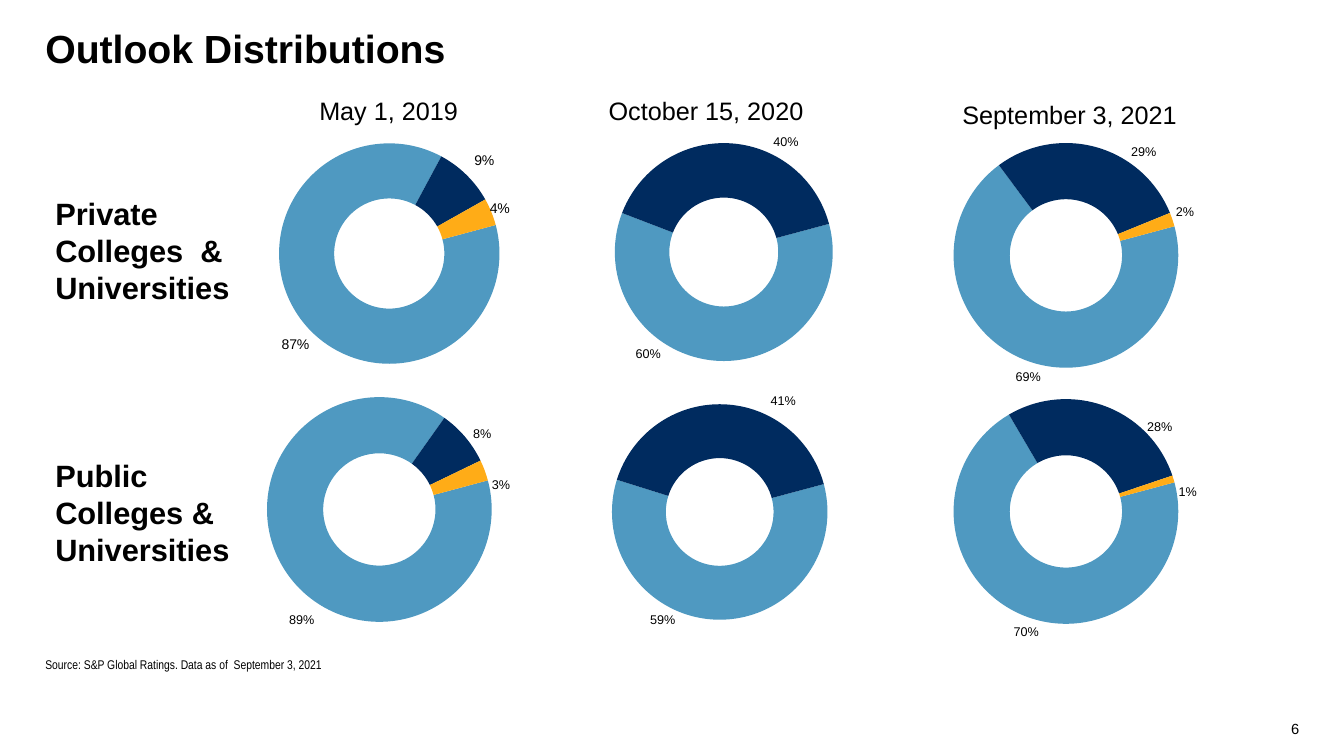
"""Build the outlook distributions slide with six doughnut charts."""
import math

from pptx import Presentation
from pptx.chart import data
from pptx.dml.color import RGBColor
from pptx.enum import chart as ec, text as et
from pptx.oxml import parse_xml
from pptx.oxml.ns import nsdecls, qn
from pptx.util import Pt

TITLE = "Outlook Distributions"
SOURCE = "Source: S&P Global Ratings. Data as of  September 3, 2021"
PAGE = "6"
DATES = [
    ("May 1, 2019", 221, 64.8, 116),
    ("October 15, 2020", 427.7, 64.8, 154.8),
    ("September 3, 2021", 680.4, 67.7, 177.8),
]
GROUPS = [
    ("Private Colleges  & Universities", 135.4),
    ("Public Colleges & Universities", 322.6),
]
COLORS = ["4F99C1", "002B5F", "FFAC17"]
CHART_W, CHART_H = 194.4, 180
START, HOLE = 75, 50
WIDE = (0.085, 0.04, 0.826, 0.892)
# left, top, plot area fractions, values, label size, label centres
CHARTS = [
    (174.2, 97.2, (0.097, 0.029, 0.875, 0.875), (87, 9, 4), 10,
     [(211, 246.5), (346, 114.5), (357, 149)]),
    (427.7, 96.5, (0.059, 0.032, 0.801, 0.865), (60, 40, 0), 9,
     [(463, 253.5), (561.5, 102), (598, 155.5)]),
    (664.6, 95, WIDE, (69, 29, 2), 9,
     [(734.5, 269.5), (817, 108.5), (846.5, 152)]),
    (174.2, 276.5, WIDE, (89, 8, 3), 9,
     [(215.5, 443), (344.5, 310.5), (358, 347)]),
    (408.2, 270.7, (0.149, 0.1, 0.792, 0.856), (59, 41), 9,
     [(473.5, 443.5), (559.5, 286.5)]),
    (664.6, 277.9, WIDE, (70, 28, 1), 9,
     [(733, 452), (828.5, 305), (848.5, 351.5)]),
]


def rgb(code):
    return RGBColor.from_string(code)


def style(font, size, name="Arial", bold=False):
    font.size, font.name, font.bold = Pt(size), name, bold
    font.color.rgb = rgb("000000")


def write(sp, text, size, name="Arial", bold=False, anchor=et.MSO_ANCHOR.TOP,
          margins=(7.2, 3.6, 7.2, 3.6)):
    tf = sp.text_frame
    tf.word_wrap, tf.auto_size = True, et.MSO_AUTO_SIZE.NONE
    tf.vertical_anchor = anchor
    tf.margin_left, tf.margin_top, tf.margin_right, tf.margin_bottom = map(Pt, margins)
    p = tf.paragraphs[0]
    p.alignment = et.PP_ALIGN.LEFT
    r = p.add_run()
    r.text = text
    style(r.font, size, name, bold)
    return p


def place(sp, *box):
    sp.left, sp.top, sp.width, sp.height = map(Pt, box)
    return sp


def text_box(s, *box):
    return s.shapes.add_textbox(*map(Pt, box))


def layout(x, y, size=None):
    parts = [("x", x), ("y", y)]
    head = ""
    if size:
        parts += [("w", size[0]), ("h", size[1])]
        head = ('<c:layoutTarget val="inner"/><c:xMode val="edge"/>'
                '<c:yMode val="edge"/>')
    body = "".join(f'<c:{tag} val="{v:.4f}"/>' for tag, v in parts)
    return parse_xml(f'<c:layout {nsdecls("c")}><c:manualLayout>{head}{body}'
                     '</c:manualLayout></c:layout>')


def add_doughnut(s, left, top, plot, values, size, targets):
    cd = data.CategoryChartData(number_format='0"%"')
    cd.categories = [str(i + 1) for i in range(len(values))]
    cd.add_series("Series 1", values)
    chart = s.shapes.add_chart(ec.XL_CHART_TYPE.DOUGHNUT, Pt(left), Pt(top),
                               Pt(CHART_W), Pt(CHART_H), cd).chart
    chart.has_legend = chart.has_title = False
    style(chart.font, 10)

    area = chart.plots[0]._element.getparent()
    for old in area.findall(qn("c:layout")):
        area.remove(old)
    px, py, pw, ph = plot
    area.insert(0, layout(px, py, (pw, ph)))
    ring = chart.plots[0]._element
    ring.find(qn("c:firstSliceAng")).set("val", str(START))
    ring.find(qn("c:holeSize")).set("val", str(HOLE))

    series = chart.plots[0].series[0]
    total = sum(values)
    as_percent = total == 100
    labels = series.data_labels
    labels.show_percentage, labels.show_value = as_percent, not as_percent
    style(labels.font, size)

    cx = left + (px + pw / 2) * CHART_W
    cy = top + (py + ph / 2) * CHART_H
    radius = min(pw * CHART_W, ph * CHART_H) / 2 * (1 + HOLE / 100) / 2
    done = 0
    for i, (value, (tx, ty)) in enumerate(zip(values, targets)):
        point = series.points[i]
        point.format.fill.solid()
        point.format.fill.fore_color.rgb = rgb(COLORS[i])
        point.format.line.fill.background()
        style(point.data_label.font, size)
        angle = math.radians(START + 360 * (done + value / 2) / total)
        done += value
        dx = tx - cx - radius * math.sin(angle)
        dy = ty - cy + radius * math.cos(angle)
        lbl = labels._element.findall(qn("c:dLbl"))[i]
        lbl.find(qn("c:idx")).addnext(layout(dx / CHART_W, dy / CHART_H))
        lbl.find(qn("c:showVal")).set("val", str(int(not as_percent)))
        lbl.find(qn("c:showPercent")).set("val", str(int(as_percent)))
    for lead in labels._element.findall(qn("c:showLeaderLines")):
        lead.set("val", "0")


def main():
    prs = Presentation()
    prs.slide_width, prs.slide_height = Pt(960), Pt(540)
    s = prs.slides.add_slide(prs.slide_layouts[1])

    p = write(place(s.shapes.title, 32.4, 17.3, 894.2, 68.4), TITLE, 28,
              bold=True, margins=(0, 3.6, 7.2, 3.6))
    p.line_spacing = 0.9

    p = write(place(s.placeholders[1], 32.4, 446.4, 894.2, 33.1), SOURCE, 9,
              "Arial Narrow", anchor=et.MSO_ANCHOR.BOTTOM, margins=(0, 0, 7.2, 0))
    pr = p._p.get_or_add_pPr()
    pr.set("marL", "0")
    pr.set("indent", "0")
    pr.append(parse_xml(f'<a:buNone {nsdecls("a")}/>'))
    p.line_spacing, p.space_before, p.space_after = 0.7, Pt(0), Pt(2)

    p = write(text_box(s, 883.4, 497.5, 44.6, 29.5), PAGE, 10.5,
              anchor=et.MSO_ANCHOR.BOTTOM, margins=(7.2, 0, 0, 0))
    p.alignment = et.PP_ALIGN.RIGHT

    for name, top in GROUPS:
        write(text_box(s, 32.4, top, 142.6, 87.1), name, 22, bold=True)
    for date, left, top, width in DATES:
        write(text_box(s, left, top, width, 29), date, 18)
    for spec in CHARTS:
        add_doughnut(s, *spec)
    prs.save("out.pptx")


if __name__ == "__main__":
    main()
